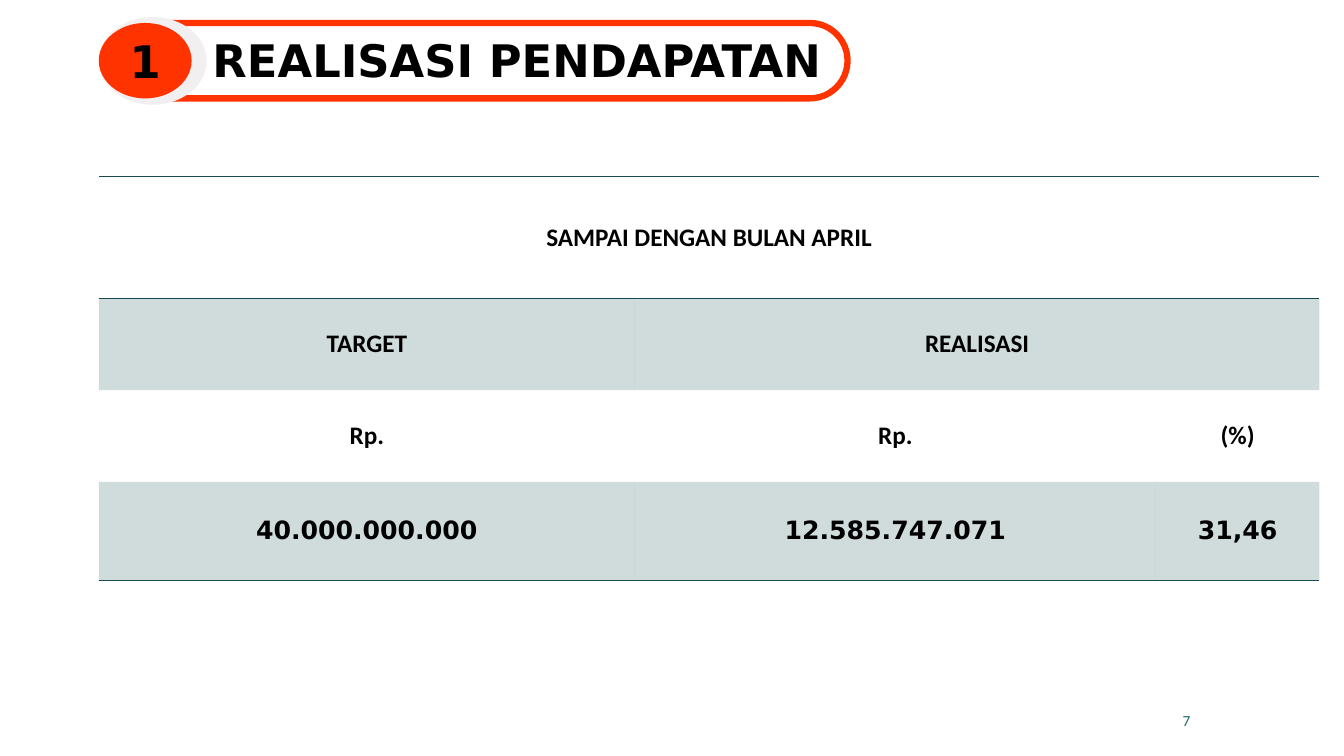
"""Build the revenue realisation slide."""
from lxml import etree
from pptx import Presentation
from pptx import util as u
from pptx.dml.color import RGBColor
from pptx.enum import shapes, text
from pptx.oxml.ns import qn

COLOURS = {"accent": "FF3300", "halo": "F1EFF0", "ink": "000000",
           "number": "1F696F", "table": "164B4F"}
PLAIN_TABLE = "{2D5ABB26-0587-4C30-8999-92F81FD0307C}"
BODY, DISPLAY = "Calibri", "DejaVu Sans"


class SlideBuilder:
    """Hold the style and the current slide."""

    def __init__(self, deck):
        """Add a title-only page to the deck."""
        self.page = deck.slides.add_slide(deck.slide_layouts[5])

    def colour(self, name):
        """Return a named colour."""
        return RGBColor.from_string(COLOURS[name])

    def lengths(self, *values):
        """Turn centimetres into lengths."""
        return [u.Cm(value) for value in values]

    def set_text(self, frame, words, size, font=BODY, colour="ink", bold=True,
                 align=text.PP_ALIGN.CENTER):
        """Put one formatted paragraph in a text frame."""
        frame.text = words
        para = frame.paragraphs[0]
        para.alignment = align
        para.font.size = u.Pt(size)
        para.font.name = font
        para.font.bold = bold
        para.font.color.rgb = self.colour(colour)
        return para

    def title(self, words, place):
        """Move, fill and format the title placeholder."""
        box = self.page.shapes.title
        box.left, box.top, box.width, box.height = self.lengths(*place)
        frame = box.text_frame
        para = self.set_text(frame, words, 32, DISPLAY)
        para.line_spacing = 0.9
        frame.auto_size = text.MSO_AUTO_SIZE.NONE
        frame.vertical_anchor = text.MSO_ANCHOR.BOTTOM

    def shape(self, group, kind, place, fill=None, line=None):
        """Add a flat preset shape to a group."""
        shape = group.shapes.add_shape(kind, *self.lengths(*place))
        shape.shadow.inherit = False
        if fill:
            shape.fill.solid()
            shape.fill.fore_color.rgb = self.colour(fill)
        else:
            shape.fill.background()
        if line:
            shape.line.color.rgb = self.colour(line)
            shape.line.width = u.Pt(4.5)
        else:
            shape.line.fill.background()
        return shape

    def heading_badge(self, number):
        """Draw the pill outline with its numbered disc."""
        group = self.page.shapes.add_group_shape()
        kinds = shapes.MSO_SHAPE
        pill = self.shape(group, kinds.ROUNDED_RECTANGLE,
                          (2.79, 0.58, 18.57, 1.9), line="accent")
        pill.adjustments[0] = 0.5
        self.shape(group, kinds.OVAL, (2.49, 0.43, 2.72, 2.21), "halo")
        disc = self.shape(group, kinds.OVAL, (2.49, 0.58, 2.34, 1.9), "accent")
        self.set_text(disc.text_frame, number, 32, DISPLAY)
        disc.text_frame.vertical_anchor = text.MSO_ANCHOR.MIDDLE

    def page_number(self, number, place):
        """Add the page number."""
        box = self.page.shapes.add_textbox(*self.lengths(*place))
        box.text_frame.word_wrap = True
        box.text_frame.vertical_anchor = text.MSO_ANCHOR.MIDDLE
        self.set_text(box.text_frame, number, 11, colour="number", bold=False,
                      align=text.PP_ALIGN.RIGHT)

    def border(self, cell, side):
        """Rule one side of a cell."""
        line = etree.SubElement(cell._tc.get_or_add_tcPr(), qn(f"a:ln{side}"),
                                w=str(u.Pt(1)))
        fill = etree.SubElement(line, qn("a:solidFill"))
        etree.SubElement(fill, qn("a:srgbClr"), val=COLOURS["table"])

    def tint(self, cell, banded):
        """Give a banded cell a pale fill and clear the others."""
        if not banded:
            cell.fill.background()
            return
        cell.fill.solid()
        cell.fill.fore_color.rgb = self.colour("table")
        tone = cell._tc.tcPr.find(qn("a:solidFill"))[0]
        etree.SubElement(tone, qn("a:alpha"), val="20000")

    def table(self, rows, left, top, widths, heights, merges):
        """Add a ruled table with every second row tinted."""
        place = self.lengths(left, top, sum(widths), sum(heights))
        table = self.page.shapes.add_table(
            len(rows), len(widths), *place).table
        table._tbl.tblPr.find(qn("a:tableStyleId")).text = PLAIN_TABLE
        for column, width in zip(table.columns, widths):
            column.width = u.Cm(width)
        last = len(rows) - 1
        for i, (row, height) in enumerate(zip(rows, heights)):
            table.rows[i].height = u.Cm(height)
            sides = {0: "TB", last: "B"}.get(i, "")
            for j, words in enumerate(row):
                cell = table.cell(i, j)
                tight = i == last and j > 0
                cell.margin_left = cell.margin_right = u.Cm(0 if tight else 0.51)
                cell.margin_top = cell.margin_bottom = u.Cm(0 if tight else 0.2)
                cell.vertical_anchor = text.MSO_ANCHOR.MIDDLE
                for side in sides:
                    self.border(cell, side)
                self.tint(cell, i % 2 == 1)
                if words:
                    self.set_text(cell.text_frame, words, 18,
                                  DISPLAY if i == last else BODY)
        for start, end in merges:
            table.cell(*start).merge(table.cell(*end))


def main():
    """Build and save the deck."""
    deck = Presentation()
    deck.slide_width, deck.slide_height = u.Cm(33.87), u.Cm(19.05)
    slide = SlideBuilder(deck)
    slide.page_number("7", (22.35, 17.65, 7.9, 1.02))
    slide.heading_badge("1")
    slide.title("REALISASI PENDAPATAN", (2.11, 0.43, 21.84, 1.9))
    slide.table(
        [("SAMPAI DENGAN BULAN APRIL", "", ""),
         ("TARGET", "REALISASI", ""),
         ("Rp.", "Rp.", "(%)"),
         ("40.000.000.000", "12.585.747.071", "31,46")],
        2.49, 4.45, (13.51, 13.13, 4.12), (3.07, 2.31, 2.31, 2.49),
        [((0, 0), (0, 2)), ((1, 1), (1, 2))])
    deck.save("out.pptx")


if __name__ == "__main__":
    main()
